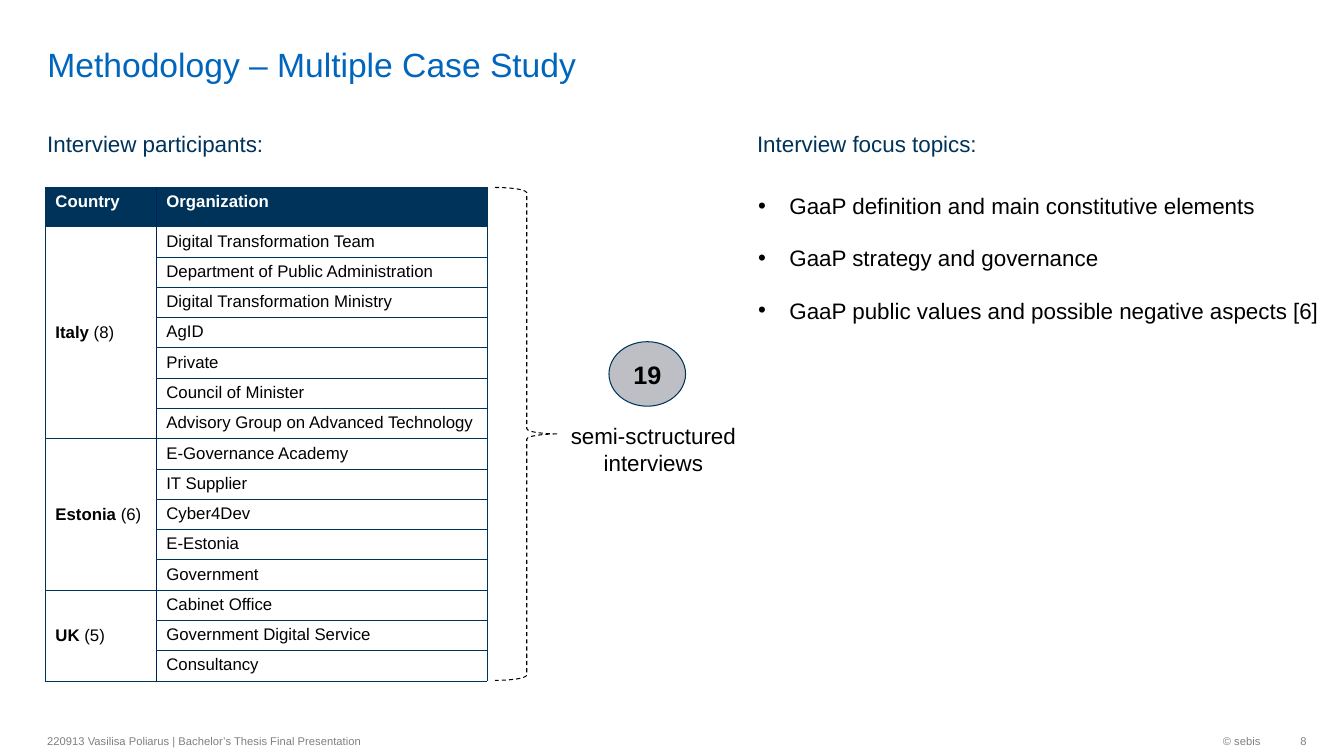
from pptx import Presentation
from pptx.dml.color import RGBColor
from pptx.enum.dml import MSO_LINE
from pptx.enum.shapes import MSO_SHAPE
from pptx.enum.text import MSO_ANCHOR as ANCHOR, MSO_AUTO_SIZE as AUTO, PP_ALIGN as ALIGN
from pptx.oxml.ns import qn
from pptx.util import Inches, Pt
from lxml import etree

NAVY, DEEP, BLUE, GREY = "003359", "002060", "0065BD", "808080"
BLACK, WHITE, SILVER = "000000", "FFFFFF", "A2A5AD"

COUNTRIES = [
    ("Italy", 8, ["Digital Transformation Team", "Department of Public Administration",
                  "Digital Transformation Ministry", "AgID", "Private",
                  "Council of Minister", "Advisory Group on Advanced Technology"]),
    ("Estonia", 6, ["E-Governance Academy", "IT Supplier", "Cyber4Dev",
                    "E-Estonia", "Government"]),
    ("UK", 5, ["Cabinet Office", "Government Digital Service", "Consultancy"]),
]
TOPICS = [
    "GaaP definition and main constitutive elements",
    "GaaP strategy and governance",
    "GaaP public values and possible negative aspects [6]",
]


def rgb(value):
    return RGBColor.from_string(value)


def add_run(p, text, size=16, color=BLACK, bold=False):
    r = p.add_run()
    r.text = text
    r.font.name = "Arial"
    r.font.size = Pt(size)
    r.font.bold = bold
    r.font.color.rgb = rgb(color)


def write(p, text, align=ALIGN.LEFT, after=0, **fmt):
    p.alignment = align
    p.space_before = Pt(0)
    p.space_after = Pt(after)
    add_run(p, text, **fmt)


def place(sp, left, top, width, height):
    sp.left, sp.top = Inches(left), Inches(top)
    sp.width, sp.height = Inches(width), Inches(height)


def add_text(slide, box, text, anchor=ANCHOR.TOP, margin_right=0.1, **fmt):
    tf = slide.shapes.add_textbox(*map(Inches, box)).text_frame
    tf.word_wrap = True
    tf.vertical_anchor = anchor
    tf.margin_right = Inches(margin_right)
    write(tf.paragraphs[0], text, **fmt)


def fill_title(title):
    place(title, 0.37, 0.05, 10.99, 0.79)
    tf = title.text_frame
    tf.auto_size = AUTO.NONE
    tf.vertical_anchor = ANCHOR.BOTTOM
    tf.margin_top = tf.margin_bottom = 0
    write(tf.paragraphs[0], "Methodology – Multiple Case Study", size=24, color=BLUE)


def add_bullet(p, indent):
    pPr = p._p.get_or_add_pPr()
    pPr.set("marL", str(Inches(indent)))
    pPr.set("indent", str(-Inches(indent)))
    etree.SubElement(pPr, qn("a:buFont"), typeface="Arial")
    etree.SubElement(pPr, qn("a:buChar"), char="•")


def fill_topics(body):
    place(body, 7.42, 1.86, 5.78, 1.41)
    tf = body.text_frame
    tf.auto_size = AUTO.NONE
    for i, topic in enumerate(TOPICS):
        p = tf.add_paragraph() if i else tf.paragraphs[0]
        add_bullet(p, 0.31)
        write(p, topic, after=18 if i < len(TOPICS) - 1 else 6)


def add_border(tcPr, side, color, width):
    ln = etree.SubElement(tcPr, qn("a:ln" + side), w=str(Pt(width)))
    solid = etree.SubElement(ln, qn("a:solidFill"))
    etree.SubElement(solid, qn("a:srgbClr"), val=color)


def style_cell(cell, col, fill):
    tcPr = cell._tc.get_or_add_tcPr()
    inner = "R" if col == 0 else "L"
    for side in "LRTB":
        if side == inner:
            add_border(tcPr, side, DEEP, 0.5)
        else:
            add_border(tcPr, side, NAVY, 0.75)
    cell.fill.solid()
    cell.fill.fore_color.rgb = rgb(fill)


def add_participants(slide):
    count = sum(len(names) for _, _, names in COUNTRIES)
    box = map(Inches, (0.45, 1.86, 4.38, 4.89))
    table = slide.shapes.add_table(count + 1, 2, *box).table
    table.horz_banding = False
    table.columns[0].width, table.columns[1].width = Inches(1.1), Inches(3.28)
    for i, row in enumerate(table.rows):
        row.height = Inches(0.3 if i else 0.39)
        for col, cell in enumerate(row.cells):
            style_cell(cell, col, WHITE if i else NAVY)
    for col, label in enumerate(("Country", "Organization")):
        write(table.cell(0, col).text_frame.paragraphs[0], label, size=12, color=WHITE, bold=True)
    first = 1
    for country, interviews, names in COUNTRIES:
        head = table.cell(first, 0)
        head.merge(table.cell(first + len(names) - 1, 0))
        head.vertical_anchor = ANCHOR.MIDDLE
        p = head.text_frame.paragraphs[0]
        write(p, country, size=12, bold=True)
        add_run(p, f" ({interviews})", size=12)
        for i, name in enumerate(names, first):
            write(table.cell(i, 1).text_frame.paragraphs[0], name, size=12)
        first += len(names)


def add_outline(slide, kind, box, color):
    sp = slide.shapes.add_shape(kind, *map(Inches, box))
    sp.shadow.inherit = False
    sp.line.color.rgb = rgb(color)
    sp.line.width = Pt(0.75)
    return sp


def add_brace(slide):
    sp = add_outline(slide, MSO_SHAPE.RIGHT_BRACE, (4.91, 1.86, 0.63, 4.89), BLACK)
    sp.fill.background()
    sp.line.dash_style = MSO_LINE.DASH


def add_count(slide):
    sp = add_outline(slide, MSO_SHAPE.OVAL, (6.04, 3.39, 0.76, 0.64), NAVY)
    sp.fill.solid()
    sp.fill.fore_color.rgb = rgb(SILVER)
    clr = sp._element.spPr.find(qn("a:solidFill")).find(qn("a:srgbClr"))
    etree.SubElement(clr, qn("a:alpha"), val="70000")
    tf = sp.text_frame
    tf.vertical_anchor = ANCHOR.MIDDLE
    write(tf.paragraphs[0], "19", align=ALIGN.CENTER, size=18, bold=True)


def main():
    prs = Presentation()
    prs.slide_width, prs.slide_height = Inches(13.33), Inches(7.5)
    slide = prs.slides.add_slide(prs.slide_layouts[1])
    fill_title(slide.shapes.title)
    fill_topics(slide.placeholders[1])
    add_text(slide, (0.37, 1.24, 2.6, 0.37), "Interview participants:", color=NAVY)
    add_text(slide, (7.41, 1.24, 2.52, 0.37), "Interview focus topics:", color=NAVY)
    add_participants(slide)
    add_brace(slide)
    add_count(slide)
    add_text(slide, (5.54, 4.14, 1.88, 0.64), "semi-sctructured interviews",
             align=ALIGN.CENTER, after=6)
    footer = dict(anchor=ANCHOR.MIDDLE, size=8, color=GREY)
    add_text(slide, (0.37, 7.19, 4.73, 0.32),
             "220913 Vasilisa Poliarus | Bachelor’s Thesis Final Presentation", **footer)
    add_text(slide, (10.26, 7.19, 2.34, 0.32), "© sebis", align=ALIGN.RIGHT, **footer)
    add_text(slide, (12.6, 7.19, 0.36, 0.32), "8", align=ALIGN.RIGHT, margin_right=0, **footer)
    prs.save("out.pptx")


if __name__ == "__main__":
    main()
